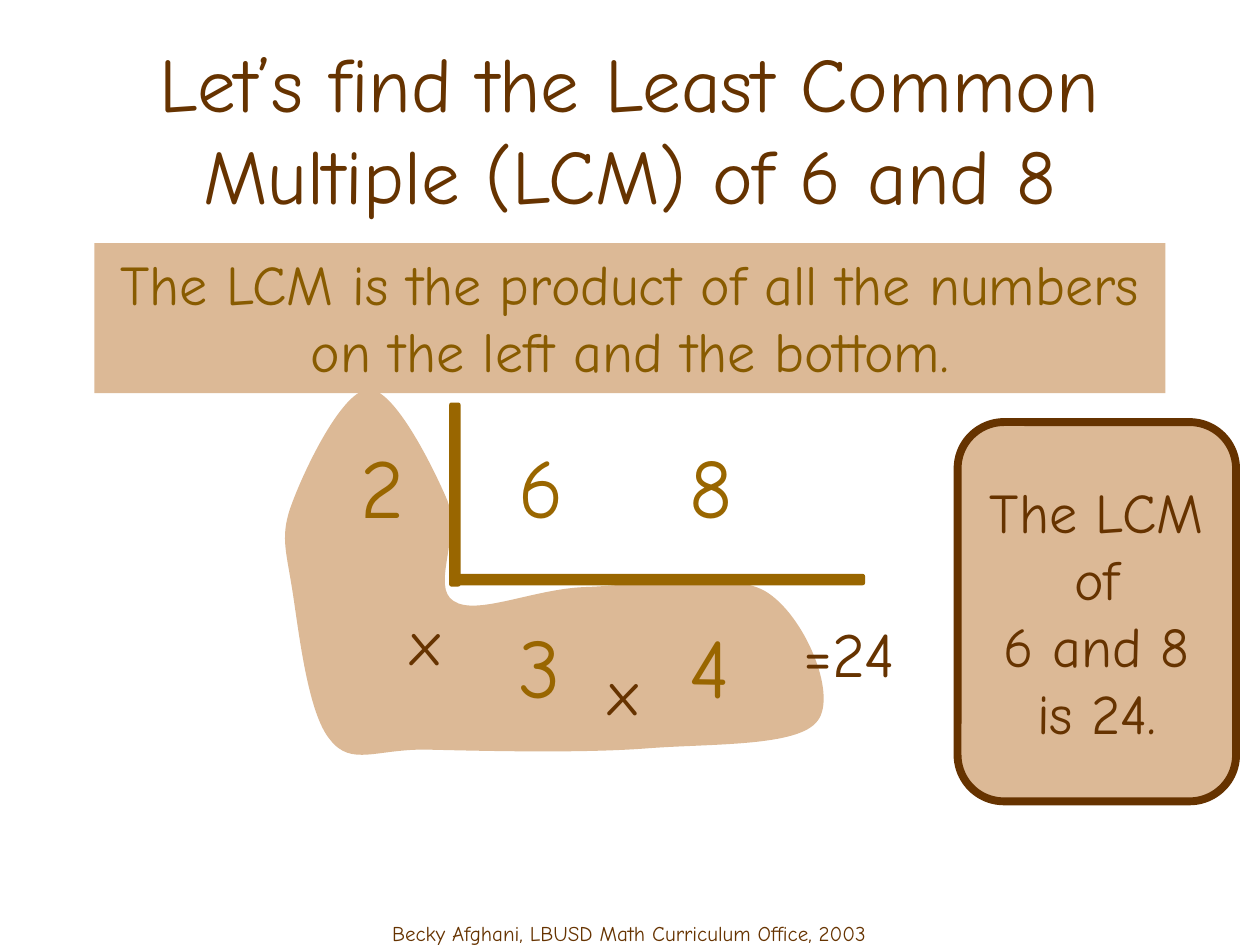
from dataclasses import dataclass

from lxml.etree import SubElement
from pptx import Presentation
from pptx.dml.color import RGBColor
from pptx.enum.shapes import MSO_SHAPE
from pptx.enum.text import MSO_ANCHOR, PP_ALIGN
from pptx.oxml.ns import qn
from pptx.util import Inches, Pt


@dataclass(frozen=True)
class Theme:
    font: str = "Comic Neue"
    brown: str = "663300"
    ochre: str = "996600"
    olive: str = "885B00"
    tan: str = "DCB996"
    title_size: int = 44
    number_size: int = 48
    sign_size: int = 36
    body_size: int = 32
    footer_size: int = 12


THEME = Theme()

TITLE = "Let’s find the Least Common Multiple (LCM) of 6 and 8"
RULE = "The LCM is the product of all the numbers on the left and the bottom."
ANSWER = ["The LCM", "of", "6 and 8", "is 24."]
FOOTER = "Becky Afghani, LBUSD Math Curriculum Office, 2003"

COLUMN_LEFTS = [2.76, 4.02, 5.37]
LADDER = [(3.4, ["2", "6", "8"]), (4.83, ["", "3", "4"])]
SIGNS = [
    ("x", (3.16, 4.73, 0.41, 0.39)),
    ("x", (4.73, 5.13, 0.41, 0.39)),
    ("=24", (6.23, 4.83, 1.02, 0.86)),
]
BARS = [(3.57, 3.2, 0.08, 1.45), (3.57, 4.56, 3.29, 0.08)]

BLOB_START = (2.32, 4.68)
BLOB_CURVES = [
    [(2.27, 4.36), (2.22, 4.25), (2.32, 3.99)],
    [(2.42, 3.72), (2.72, 3.09), (2.93, 3.09)],
    [(3.13, 3.09), (3.43, 3.69), (3.55, 3.97)],
    [(3.66, 4.25), (3.42, 4.66), (3.6, 4.77)],
    [(3.78, 4.89), (4.22, 4.68), (4.63, 4.66)],
    [(5.04, 4.65), (5.76, 4.52), (6.07, 4.69)],
    [(6.38, 4.87), (6.65, 5.51), (6.49, 5.72)],
    [(6.34, 5.93), (5.64, 5.9), (5.13, 5.94)],
    [(4.61, 5.98), (3.82, 5.96), (3.4, 5.95)],
    [(2.99, 5.94), (2.79, 6.09), (2.62, 5.87)],
    [(2.44, 5.66), (2.37, 4.99), BLOB_START],
]


def write_text(shape, lines, size, color=THEME.brown, anchor=MSO_ANCHOR.TOP, wrap=True):
    frame = shape.text_frame
    frame.word_wrap = wrap
    frame.vertical_anchor = anchor
    frame.text = "\n".join(lines)
    for paragraph in frame.paragraphs:
        paragraph.alignment = PP_ALIGN.CENTER
        font = paragraph.runs[0].font
        font.name = THEME.font
        font.size = Pt(size)
        font.color.rgb = RGBColor.from_string(color)


def add_text(slide, text, box, **style):
    shape = slide.shapes.add_textbox(*map(Inches, box))
    write_text(shape, [text], **style)


def paint(shape, fill, line=None, line_width=0.75):
    shape.shadow.inherit = False
    shape.fill.solid()
    shape.fill.fore_color.rgb = RGBColor.from_string(fill)
    if line:
        shape.line.color.rgb = RGBColor.from_string(line)
        shape.line.width = Pt(line_width)
    else:
        shape.line.fill.background()


def add_panel(slide, kind, box, **colors):
    shape = slide.shapes.add_shape(kind, *map(Inches, box))
    paint(shape, **colors)
    return shape


def add_blob(slide):
    builder = slide.shapes.build_freeform(*BLOB_START, scale=Inches(1) / 1.0)
    builder = slide.shapes.build_freeform(*map(Inches, BLOB_START))
    points = [tuple(map(Inches, point)) for curve in BLOB_CURVES for point in curve]
    builder.add_line_segments(points, close=True)
    shape = builder.convert_to_shape()
    outline = next(shape.element.iter(qn("a:path")))
    segments = outline.findall(qn("a:lnTo"))
    close = outline.find(qn("a:close"))
    for first in range(0, len(segments), 3):
        curve = SubElement(outline, qn("a:cubicBezTo"))
        for segment in segments[first:first + 3]:
            curve.append(segment[0])
            outline.remove(segment)
    outline.append(close)
    paint(shape, THEME.tan)


def main():
    presentation = Presentation()
    presentation.slide_width = Inches(10)
    presentation.slide_height = Inches(7.5)
    slide = presentation.slides.add_slide(presentation.slide_layouts[6])

    add_text(slide, FOOTER, (0.78, 7.26, 8.43, 0.5), size=THEME.footer_size)
    add_blob(slide)
    add_text(slide, TITLE, (0.75, 0.39, 8.5, 1.25), size=THEME.title_size,
             anchor=MSO_ANCHOR.MIDDLE)
    rule = add_panel(slide, MSO_SHAPE.RECTANGLE, (0.75, 1.93, 8.5, 1.19), fill=THEME.tan)
    write_text(rule, [RULE], THEME.body_size, color=THEME.olive)

    for box in BARS:
        add_panel(slide, MSO_SHAPE.ROUNDED_RECTANGLE, box, fill=THEME.ochre, line=THEME.ochre)
    for top, numbers in LADDER:
        for left, number in zip(COLUMN_LEFTS, numbers):
            if number:
                add_text(slide, number, (left, top, 0.41, 0.94), size=THEME.number_size,
                         color=THEME.ochre, wrap=False)
    for sign, box in SIGNS:
        add_text(slide, sign, box, size=THEME.sign_size, wrap=False)

    answer = add_panel(slide, MSO_SHAPE.ROUNDED_RECTANGLE, (7.6, 3.35, 2.21, 3.01),
                       fill=THEME.tan, line=THEME.brown, line_width=4.5)
    write_text(answer, ANSWER, THEME.body_size, anchor=MSO_ANCHOR.MIDDLE, wrap=False)

    presentation.save("out.pptx")


if __name__ == "__main__":
    main()
